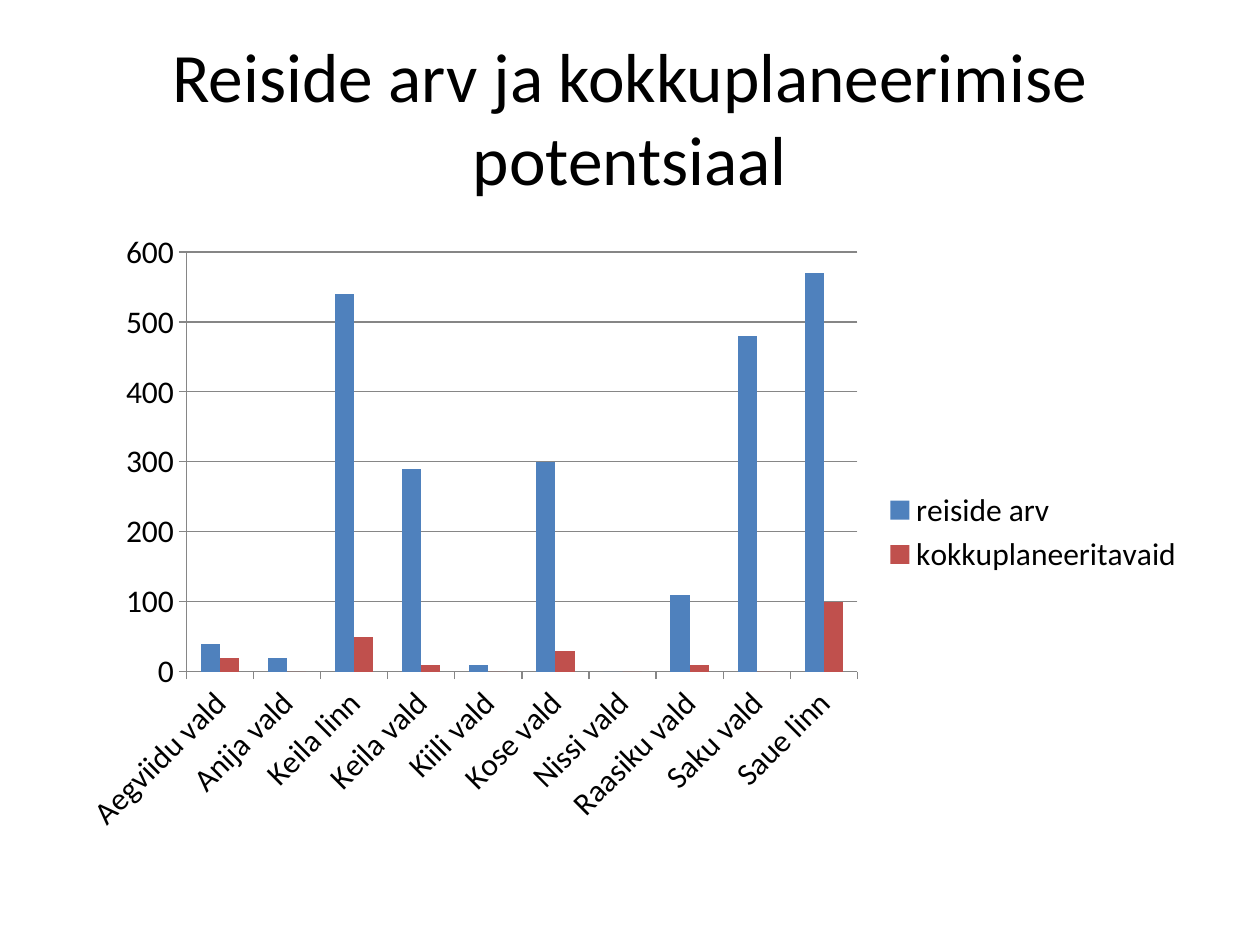
"""Build a slide with a column chart of trips by town."""
import pptx
import pptx.chart.data
import pptx.dml.color
import pptx.enum.chart
import pptx.enum.text
import pptx.util

Inches, Pt = pptx.util.Inches, pptx.util.Pt
TITLE = "Reiside arv ja kokkuplaneerimise potentsiaal"
TOWNS = ["Aegviidu vald", "Anija vald", "Keila linn", "Keila vald", "Kiili vald",
         "Kose vald", "Nissi vald", "Raasiku vald", "Saku vald", "Saue linn"]
TRIPS = {
    "reiside arv": [40, 20, 540, 290, 10, 300, 0, 110, 480, 570],
    "kokkuplaneeritavaid": [20, 0, 50, 10, 0, 30, 0, 10, 0, 100],
}
THEME = {"font": "Calibri", "ink": "000000", "rule": "868686",
         "bars": ["4F81BD", "C0504D"], "title": 39.6, "label": 18}
SIZE = (10, 7.5)
EDGE = 0.5
WIDE = SIZE[0] - 2 * EDGE


def rgb(code):
    return pptx.dml.color.RGBColor.from_string(code)


def style(font, size):
    font.name, font.size, font.bold = THEME["font"], Pt(size), False
    font.color.rgb = rgb(THEME["ink"])


def rule(line):
    line.color.rgb = rgb(THEME["rule"])
    line.width = Pt(0.75)


def add_title(slide):
    frame = slide.shapes.add_textbox(
        Inches(EDGE), Inches(0.3), Inches(WIDE), Inches(1.25)).text_frame
    frame.word_wrap = True
    frame.vertical_anchor = pptx.enum.text.MSO_ANCHOR.MIDDLE
    para = frame.paragraphs[0]
    para.alignment = pptx.enum.text.PP_ALIGN.CENTER
    run = para.add_run()
    run.text = TITLE
    style(run.font, THEME["title"])


def add_trips(slide):
    kinds = pptx.enum.chart
    data = pptx.chart.data.CategoryChartData()
    data.categories = TOWNS
    for name, vals in TRIPS.items():
        data.add_series(name, vals)
    chart = slide.shapes.add_chart(
        kinds.XL_CHART_TYPE.COLUMN_CLUSTERED, Inches(EDGE), Inches(1.75),
        Inches(WIDE), Inches(4.95), data).chart
    style(chart.font, THEME["label"])
    chart.has_title = False
    chart.has_legend = True
    chart.legend.position = kinds.XL_LEGEND_POSITION.RIGHT
    chart.legend.include_in_layout = False
    plot = chart.plots[0]
    plot.gap_width, plot.overlap, plot.vary_by_categories = 150, 0, False
    for bars, code in zip(plot.series, THEME["bars"]):
        bars.format.fill.solid()
        bars.format.fill.fore_color.rgb = rgb(code)
    for axis in (chart.category_axis, chart.value_axis):
        axis.major_tick_mark = kinds.XL_TICK_MARK.OUTSIDE
        rule(axis.format.line)
    axis = chart.value_axis
    axis.minimum_scale, axis.maximum_scale, axis.major_unit = 0, 600, 100
    axis.has_major_gridlines = True
    rule(axis.major_gridlines.format.line)


def main():
    deck = pptx.Presentation()
    deck.slide_width, deck.slide_height = map(Inches, SIZE)
    slide = deck.slides.add_slide(deck.slide_layouts[6])
    add_title(slide)
    add_trips(slide)
    deck.save("out.pptx")


if __name__ == "__main__":
    main()
